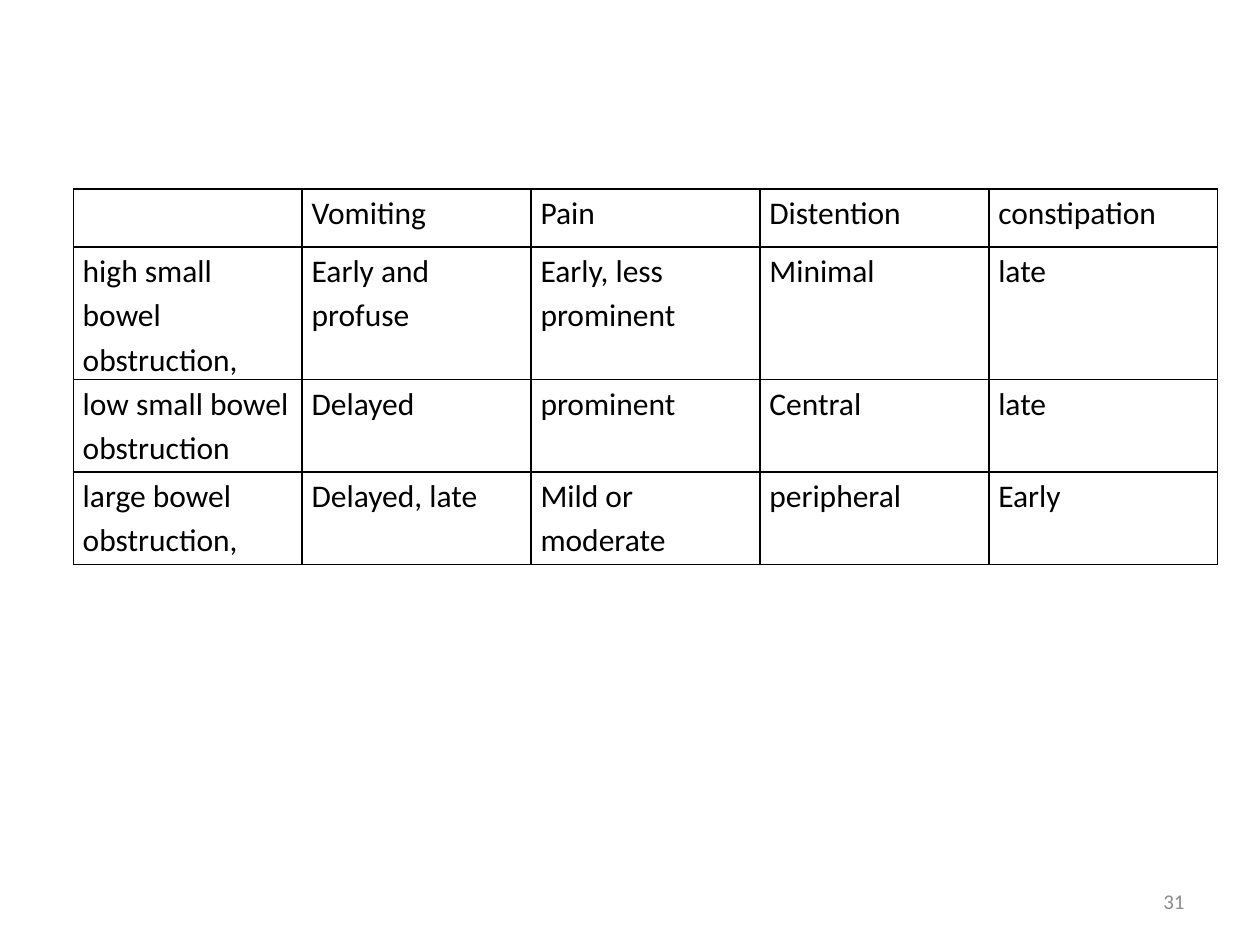
from lxml.etree import SubElement
from pptx import Presentation
from pptx.dml.color import RGBColor
from pptx.enum.text import MSO_ANCHOR, PP_ALIGN
from pptx.oxml.ns import qn
from pptx.util import Pt


def style_font(font, size, color):
    font.name = "Calibri"
    font.size = Pt(size)
    font.color.rgb = RGBColor.from_string(color)


def add_borders(cell, color):
    properties = cell._tc.get_or_add_tcPr()
    for position, side in enumerate(("lnL", "lnR", "lnT", "lnB")):
        line = properties.makeelement(qn(f"a:{side}"), {"w": str(Pt(1))})
        fill = SubElement(line, qn("a:solidFill"))
        SubElement(fill, qn("a:srgbClr"), val=color)
        properties.insert(position, line)


deck = Presentation()
deck.slide_width, deck.slide_height = Pt(720), Pt(540)
page = deck.slides.add_slide(deck.slide_layouts[6])

# Comparison of obstruction types
symptoms = [
    ["", "Vomiting", "Pain", "Distention", "constipation"],
    ["high small bowel obstruction,", "Early and profuse",
     "Early, less prominent", "Minimal", "late"],
    ["low small bowel obstruction", "Delayed", "prominent", "Central", "late"],
    ["large bowel obstruction,", "Delayed, late", "Mild or moderate",
     "peripheral", "Early"],
]
row_heights = [33.1, 75.7, 52.8, 52.8]
column_width = 130.8
table = page.shapes.add_table(
    len(symptoms), len(symptoms[0]), Pt(41.9), Pt(108),
    Pt(column_width * len(symptoms[0])), Pt(sum(row_heights))).table
table.first_row = table.horz_banding = False
for column in table.columns:
    column.width = Pt(column_width)

for row, height, texts in zip(table.rows, row_heights, symptoms):
    row.height = Pt(height)
    for cell, text in zip(row.cells, texts):
        cell.fill.background()
        cell.margin_left = cell.margin_right = Pt(5.4)
        cell.margin_top = cell.margin_bottom = 0
        add_borders(cell, "000000")
        cell.text_frame.text = text
        paragraph = cell.text_frame.paragraphs[0]
        paragraph.line_spacing = 1.15
        for span in paragraph.runs:
            style_font(span.font, 18, "000000")

# Page number
box = page.shapes.add_textbox(Pt(516), Pt(500.5), Pt(168), Pt(28.75))
box.text_frame.word_wrap = True
box.text_frame.vertical_anchor = MSO_ANCHOR.MIDDLE
box.text_frame.text = "31"
paragraph = box.text_frame.paragraphs[0]
paragraph.alignment = PP_ALIGN.RIGHT
style_font(paragraph.runs[0].font, 12, "8C8C8C")

deck.save("out.pptx")
